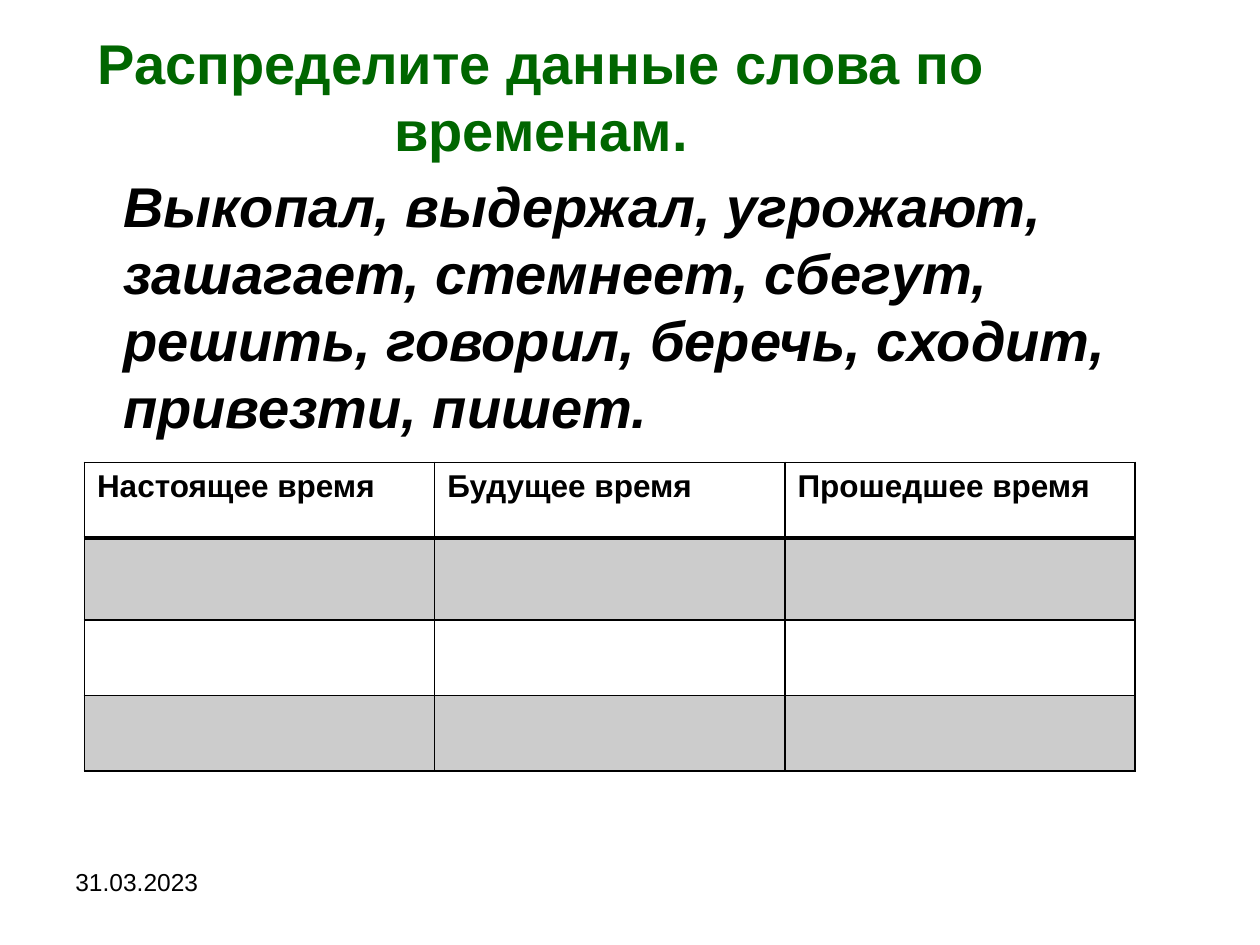
from dataclasses import dataclass

from lxml.etree import SubElement
from pptx import Presentation
from pptx.dml.color import RGBColor
from pptx.enum.text import MSO_ANCHOR as Anchor, PP_ALIGN as Align
from pptx.oxml.ns import qn
from pptx.util import Inches, Pt


@dataclass(frozen=True)
class Theme:
    font: str = "Arial"
    ink: str = "000000"
    heading: str = "006600"
    band: str = "CCCCCC"
    large: int = 32
    cell: int = 18
    small: int = 14
    thin: int = 1
    thick: int = 2


def write_text(frame, text, *, theme, size, color=None, bold=False,
               italic=False, align=Align.LEFT, indent=0):
    """Put one formatted paragraph into a text frame."""
    frame.word_wrap = True
    paragraph = frame.paragraphs[0]
    paragraph.alignment = align
    paragraph.space_before = Pt(0)
    if indent:
        paragraph._p.get_or_add_pPr().set("marL", str(Inches(indent)))
    run = paragraph.add_run()
    run.text = text
    font = run.font
    font.name, font.size = theme.font, Pt(size)
    font.bold, font.italic = bold, italic
    font.color.rgb = RGBColor.from_string(color or theme.ink)


class SlideBuilder:
    def __init__(self, presentation, theme):
        self.theme = theme
        self.slide = presentation.slides.add_slide(presentation.slide_layouts[5])

    def title(self, text, left, top, width, height):
        shape = self.slide.shapes.title
        shape.left, shape.top = Inches(left), Inches(top)
        shape.width, shape.height = Inches(width), Inches(height)
        frame = shape.text_frame
        frame.vertical_anchor = Anchor.MIDDLE
        # The bottom inset lifts the centred heading
        frame.margin_top, frame.margin_bottom = 0, Inches(0.46)
        write_text(frame, text, theme=self.theme, size=self.theme.large,
                   color=self.theme.heading, bold=True, align=Align.CENTER)

    def text(self, text, left, top, width, height, **style):
        box = self.slide.shapes.add_textbox(
            Inches(left), Inches(top), Inches(width), Inches(height))
        write_text(box.text_frame, text, theme=self.theme, **style)

    def border(self, cell, side, width):
        line = SubElement(cell._tc.get_or_add_tcPr(), qn(f"a:{side}"),
                          w=str(Pt(width)))
        fill = SubElement(line, qn("a:solidFill"))
        SubElement(fill, qn("a:srgbClr"), val=self.theme.ink)

    def table(self, headings, left, top, column_width, row_heights):
        theme = self.theme
        table = self.slide.shapes.add_table(
            len(row_heights), len(headings), Inches(left), Inches(top),
            Inches(column_width * len(headings)),
            Inches(sum(row_heights))).table
        for column in table.columns:
            column.width = Inches(column_width)
        for index, (row, height) in enumerate(zip(table.rows, row_heights)):
            row.height = Inches(height)
            for cell, heading in zip(row.cells, headings):
                # Borders come before the fill in the cell properties
                for side in ("lnL", "lnR", "lnT", "lnB"):
                    under_heading = (index, side) in ((0, "lnB"), (1, "lnT"))
                    self.border(cell, side,
                                theme.thick if under_heading else theme.thin)
                if index % 2:
                    cell.fill.solid()
                    cell.fill.fore_color.rgb = RGBColor.from_string(theme.band)
                else:
                    cell.fill.background()
                if index == 0:
                    write_text(cell.text_frame, heading, theme=theme,
                               size=theme.cell, bold=True)


def main():
    presentation = Presentation()
    presentation.slide_width, presentation.slide_height = Inches(10), Inches(7.5)
    theme = Theme()
    builder = SlideBuilder(presentation, theme)

    # Date
    builder.text("31.03.2023", 0.5, 6.83, 2.33, 0.52, size=theme.small)

    # Task and words to sort
    builder.title("Распределите данные слова по временам.", 0.28, 0.36, 8.03, 1.26)
    builder.text("Выкопал, выдержал, угрожают, зашагает, стемнеет, сбегут, "
                 "решить, говорил, беречь, сходит, привезти, пишет.",
                 0.5, 1.31, 9, 5.83, size=theme.large,
                 bold=True, italic=True, indent=0.38)

    # Answer table
    builder.table(["Настоящее время", "Будущее время", "Прошедшее время"],
                  0.67, 3.67, 2.78, [0.6, 0.65, 0.6, 0.6])

    presentation.save("out.pptx")


if __name__ == "__main__":
    main()
